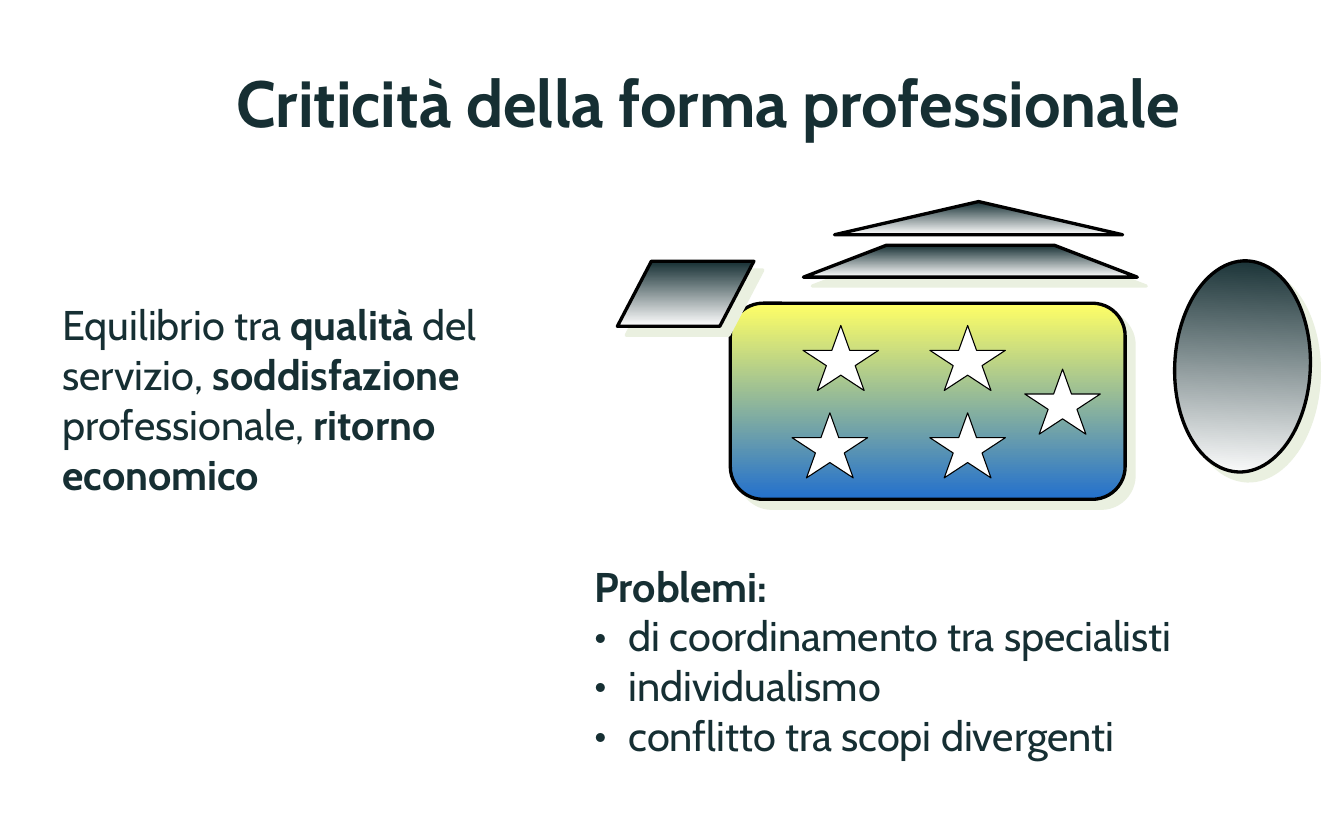
"""Build the slide on the weak points of the professional form."""
from dataclasses import dataclass
from typing import NamedTuple

from lxml import etree
from pptx import Presentation
from pptx.dml.color import RGBColor
from pptx.enum.shapes import MSO_SHAPE
from pptx.enum.text import PP_ALIGN
from pptx.oxml.ns import qn
from pptx.util import Cm, Pt

ROUND = MSO_SHAPE.ROUNDED_RECTANGLE
TRAP = MSO_SHAPE.TRAPEZOID
OVAL = MSO_SHAPE.OVAL
SLANT = MSO_SHAPE.PARALLELOGRAM
STAR = MSO_SHAPE.STAR_5_POINT
ROOF = MSO_SHAPE.ISOSCELES_TRIANGLE
LEFT = PP_ALIGN.LEFT
MID = PP_ALIGN.CENTER

FONT = "Cabin"
DARK = "162F33"
WHITE = "FFFFFF"
BLACK = "000000"
SHADE = "EAF0E0"


class Place(NamedTuple):
    left: float
    top: float
    width: float
    height: float


class Run(NamedTuple):
    text: str
    bold: bool = False


@dataclass
class Form:
    kind: int
    place: Place
    fill: tuple[str, ...] = (DARK, WHITE)
    line: float = 2.25
    adjust: float | None = None
    turn: float = 0
    shade: bool = True


@dataclass
class Para:
    runs: list[Run]
    dot: bool = False


@dataclass
class Box:
    place: Place
    paras: list[Para]
    size: int = 28
    align: int = LEFT


FORMS = [
    Form(ROUND, Place(17.39, 7.22, 9.4, 4.67), ("FFFF66", "2370CD"), adjust=0.167),
    Form(TRAP, Place(19.13, 5.84, 7.95, 0.76), adjust=2.6),
    Form(OVAL, Place(27.97, 6.21, 3.23, 5.03), turn=2.5),
    Form(SLANT, Place(14.7, 6.22, 3.25, 1.55), adjust=0.523),
    *(
        Form(STAR, Place(left, top, 1.8, 1.55), (WHITE,), 0.75, shade=False)
        for left, top in [
            (19.12, 7.75), (22.14, 9.83), (22.14, 7.75), (18.86, 9.83), (24.4, 8.79),
        ]
    ),
    Form(ROOF, Place(19.87, 4.8, 6.86, 0.79), shade=False),
]

BOXES = [
    Box(Place(1.19, 6.98, 12.4, 6.58), [Para([
        Run("Equilibrio tra "),
        Run("qualità ", True),
        Run("del servizio, "),
        Run("soddisfazione ", True),
        Run("professionale, "),
        Run("ritorno economico", True),
    ])]),
    Box(Place(13.86, 13.2, 17.07, 5.05), [
        Para([Run("Problemi:", True)]),
        Para([Run("di coordinamento tra specialisti")], True),
        Para([Run("individualismo")], True),
        Para([Run("conflitto tra scopi divergenti")], True),
    ]),
    Box(
        Place(3.38, 1.33, 26.97, 2.16),
        [Para([Run("Criticità della forma professionale", True)])],
        44, MID,
    ),
]


def hue(code: str) -> RGBColor:
    return RGBColor.from_string(code)


def spot(place: Place) -> list[Cm]:
    return [Cm(side) for side in place]


def add_shade(shape) -> None:
    group = shape._element.spPr.find(qn("a:effectLst"))
    cast = etree.SubElement(
        group, qn("a:outerShdw"), dist=str(Pt(8.5)), dir="2700000",
        algn="ctr", rotWithShape="0",
    )
    etree.SubElement(cast, qn("a:srgbClr"), val=SHADE)


def draw_form(slide, form: Form) -> None:
    shape = slide.shapes.add_shape(form.kind, *spot(form.place))
    shape.rotation = form.turn
    if form.adjust is not None:
        shape.adjustments[0] = form.adjust
    if len(form.fill) == 1:
        shape.fill.solid()
        shape.fill.fore_color.rgb = hue(form.fill[0])
    else:
        shape.fill.gradient()
        shape.fill.gradient_angle = 270
        for stop, code in zip(shape.fill.gradient_stops, form.fill):
            stop.color.rgb = hue(code)
    shape.line.color.rgb = hue(BLACK)
    shape.line.width = Pt(form.line)
    shape.shadow.inherit = False
    if form.shade:
        add_shade(shape)


def add_dot(para) -> None:
    props = para._p.get_or_add_pPr()
    props.set("marL", str(Cm(0.81)))
    props.set("indent", str(Cm(-0.81)))
    etree.SubElement(props, qn("a:buFont"), typeface=FONT)
    etree.SubElement(props, qn("a:buChar"), char="•")


def draw_box(slide, box: Box) -> None:
    frame = slide.shapes.add_textbox(*spot(box.place)).text_frame
    frame.word_wrap = True
    frame.margin_left = frame.margin_right = Cm(0.3)
    frame.margin_top = frame.margin_bottom = Cm(0.15)
    for rank, item in enumerate(box.paras):
        para = frame.add_paragraph() if rank else frame.paragraphs[0]
        para.alignment = box.align
        if item.dot:
            add_dot(para)
        for part in item.runs:
            run = para.add_run()
            run.text = part.text
            run.font.name = FONT
            run.font.size = Pt(box.size)
            run.font.bold = part.bold
            run.font.color.rgb = hue(DARK)


def main() -> None:
    deck = Presentation()
    deck.slide_width, deck.slide_height = Cm(32), Cm(20)
    slide = deck.slides.add_slide(deck.slide_layouts[6])
    for form in FORMS:
        draw_form(slide, form)
    for box in BOXES:
        draw_box(slide, box)
    deck.save("out.pptx")


if __name__ == "__main__":
    main()
